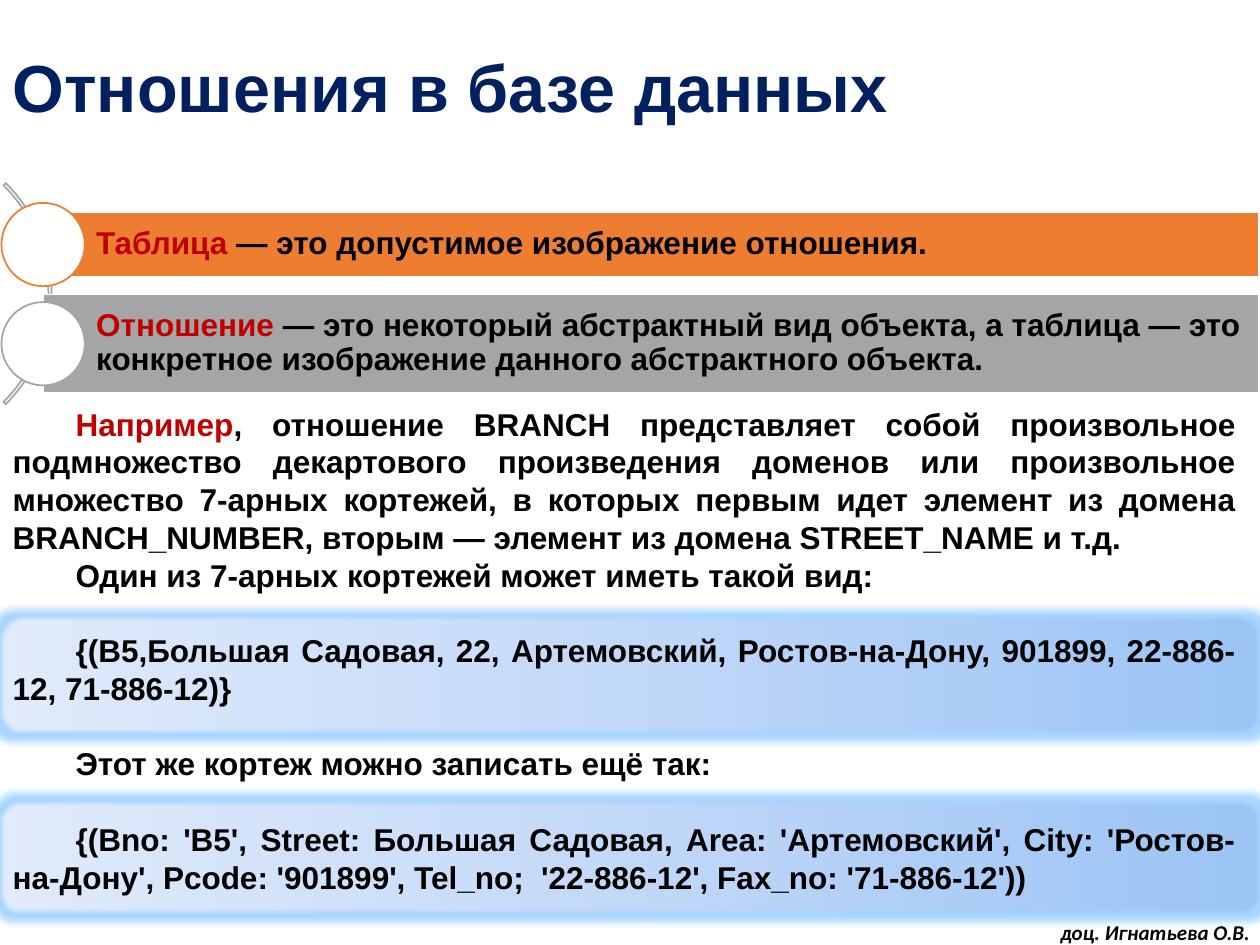
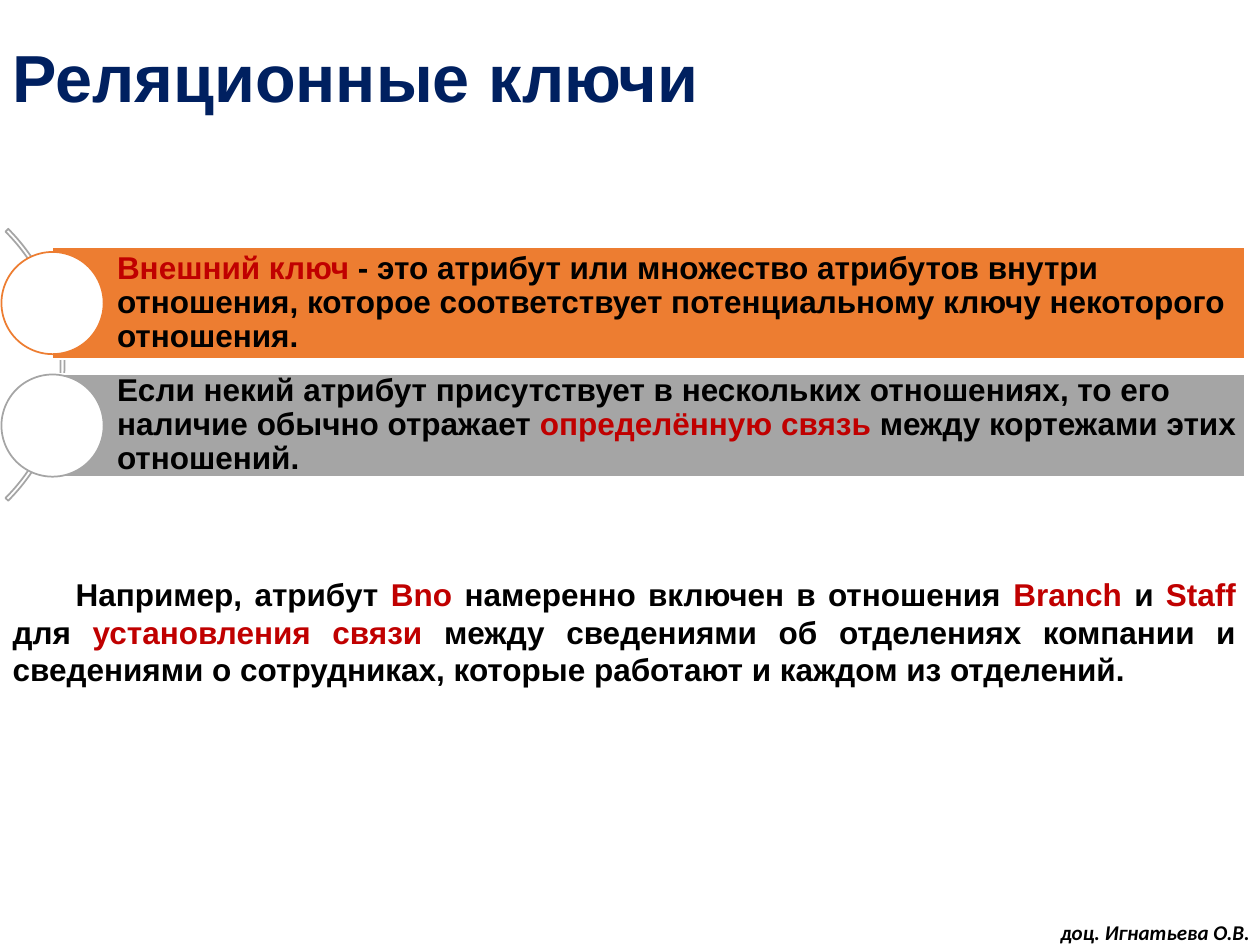
"""Build two lecture slides on database relations and relational keys."""
from copy import deepcopy

from lxml import etree
from pptx import Presentation
from pptx import util as u
from pptx.dml.color import RGBColor
from pptx.enum import shapes, text
from pptx.oxml import ns, parse_xml

NAVY = RGBColor(0x00, 0x20, 0x60)
RED = RGBColor(0xC0, 0x00, 0x00)
BLACK = RGBColor(0x00, 0x00, 0x00)
WHITE = RGBColor(0xFF, 0xFF, 0xFF)
ORANGE = RGBColor(0xED, 0x7D, 0x31)
GRAY = RGBColor(0xA5, 0xA5, 0xA5)
CAPSULE_BLUES = [RGBColor(0x9A, 0xC3, 0xF5), RGBColor(0xC2, 0xD8, 0xF8), RGBColor(0xE1, 0xEB, 0xFB)]
GLOW = f'<a:glow {ns.nsdecls("a")} rad="101600"><a:srgbClr val="A6D5FF"/></a:glow>'
SOFT_EDGE = f'<a:softEdge {ns.nsdecls("a")} rad="31750"/>'
CIRCLE_LEFT = 0.03
LINE_GAP = u.Pt(21.5)

SLIDES = [
    {
        "title": "Отношения в базе данных",
        "title_height": 3.12,
        "capsules": [(16.13, 2.29), (12.4, 2.39)],
        "arc": (-5.26, 2.77, 6.3, 0.01),
        "circle": 1.68,
        "band_right": 25.37,
        "inset": 1.07,
        "bands": [
            (4.27, 1.32, "*Таблица *— это допустимое изображение отношения."),
            (5.94, 1.98, "*Отношение* — это некоторый абстрактный вид объекта, а таблица — это "
                         "конкретное изображение данного абстрактного объекта."),
        ],
        "body": (8.03, 11.81),
        "paragraphs": [
            (0, "*Например*, отношение BRANCH представляет собой произвольное подмножество "
                "декартового произведения доменов или произвольное множество 7-арных кортежей, "
                "в которых первым идет элемент из домена BRANCH_NUMBER, вторым — элемент из "
                "домена STREET_NAME и т.д."),
            (0, "Один из 7-арных кортежей может иметь такой вид:"),
            (LINE_GAP, "{(B5,Большая Садовая, 22, Артемовский, Ростов-на-Дону, 901899, "
                       "22-886-12, 71-886-12)}"),
            (LINE_GAP, "Этот же кортеж можно записать ещё так:"),
            (LINE_GAP, "{(Вnо: 'В5', Street: Большая Садовая, Area: 'Артемовский', City: "
                       "'Ростов-на-Дону', Pcode: '901899', Tel_no;  '22-886-12', "
                       "Fax_no: '71-886-12'))"),
        ],
    },
    {
        "title": "Реляционные ключи",
        "title_height": 2.72,
        "capsules": [],
        "arc": (-6.45, 3.48, 7.75, 0.01),
        "circle": 2.06,
        "band_right": 25.1,
        "inset": 1.3,
        "bands": [
            (4.98, 2.26, "*Внешний ключ *- это атрибут или множество атрибутов внутри отношения, "
                         "которое соответствует потенциальному ключу некоторого отношения."),
            (7.54, 2.08, "Если некий атрибут присутствует в нескольких отношениях, то его наличие "
                         "обычно отражает *определённую связь *между кортежами этих отношений."),
        ],
        "body": (11.46, 2.69),
        "paragraphs": [
            (0, "Например, атрибут *Bnо* намеренно включен в отношения *Branch* и *Staff* для "
                "*установления связи *между сведениями об отделениях компании и сведениями о "
                "сотрудниках, которые работают и каждом из отделений."),
        ],
    },
]


def write(para, marked, size=18, color=BLACK, name="Arial"):
    """Fill a paragraph with bold runs; parts between asterisks turn red."""
    for number, part in enumerate(marked.split("*")):
        if part:
            span = para.add_run()
            span.text = part
            span.font.name = name
            span.font.size = u.Pt(size)
            span.font.bold = True
            span.font.color.rgb = RED if number % 2 else color


def add_figure(page, kind, left, top, width, height, fill=None, line=None):
    """Add a preset shape without shadow, with an optional fill and outline."""
    figure = page.shapes.add_shape(kind, u.Cm(left), u.Cm(top), u.Cm(width), u.Cm(height))
    figure.shadow.inherit = False
    if fill is None:
        figure.fill.background()
    else:
        figure.fill.solid()
        figure.fill.fore_color.rgb = fill
    if line is None:
        figure.line.fill.background()
    else:
        figure.line.color.rgb = line
        figure.line.width = u.Pt(1)
    return figure


deck = Presentation()
deck.slide_width, deck.slide_height = u.Cm(25.4), u.Cm(19.05)

for content in SLIDES:
    page = deck.slides.add_slide(deck.slide_layouts[1])
    title, body = page.placeholders

    for position, (top, height) in enumerate(content["capsules"]):
        capsule = add_figure(page, shapes.MSO_SHAPE.ROUNDED_RECTANGLE, 0, top, 25.4, height)
        capsule.fill.gradient()
        capsule.fill.gradient_angle = 180
        stop_list = capsule.element.spPr.find(".//" + ns.qn("a:gsLst"))
        stop_list.insert(1, deepcopy(stop_list[0]))
        for number, stop in enumerate(capsule.fill.gradient_stops):
            stop.position = number / 2
            stop.color.rgb = CAPSULE_BLUES[number]
        effects = capsule.element.spPr.find(ns.qn("a:effectLst"))
        effects.append(parse_xml(GLOW))
        effects.append(parse_xml(SOFT_EDGE))
        page.shapes.element.insert(2 + position, capsule.element)

    title.left, title.top = 0, u.Cm(0.28)
    title.width, title.height = u.Cm(25.4), u.Cm(content["title_height"])
    title.text_frame.vertical_anchor = text.MSO_ANCHOR.MIDDLE
    title.text_frame.auto_size = text.MSO_AUTO_SIZE.NONE
    heading = title.text_frame.paragraphs[0]
    heading.alignment = text.PP_ALIGN.LEFT
    heading.line_spacing = 0.9
    write(heading, content["title"], 38, NAVY)

    body_top, body_height = content["body"]
    body.left, body.top = 0, u.Cm(body_top)
    body.width, body.height = u.Cm(25.17), u.Cm(body_height)
    frame = body.text_frame
    frame.auto_size = text.MSO_AUTO_SIZE.NONE
    for number, (gap, marked) in enumerate(content["paragraphs"]):
        para = frame.add_paragraph() if number else frame.paragraphs[0]
        properties = para._p.get_or_add_pPr()
        properties.set("marL", "0")
        properties.set("indent", str(u.Cm(1.27)))
        etree.SubElement(properties, ns.qn("a:buNone"))
        para.alignment = text.PP_ALIGN.JUSTIFY
        para.space_before = u.Pt(0) if not gap else gap
        write(para, marked)

    footer = page.shapes.add_textbox(u.Cm(21.13), u.Cm(18.42), u.Cm(4.39), u.Cm(0.76))
    footer.text_frame.word_wrap = True
    author = footer.text_frame.paragraphs[0]
    write(author, "доц. Игнатьева О.В.", 12, name="Calibri")
    author.runs[0].font.italic = True

    arc_left, arc_top, arc_size, thickness = content["arc"]
    arc = add_figure(page, shapes.MSO_SHAPE.BLOCK_ARC, arc_left, arc_top, arc_size, arc_size, line=GRAY)
    for number, value in enumerate((189, 27, thickness)):
        arc.adjustments[number] = value

    circle_size = content["circle"]
    band_left = CIRCLE_LEFT + circle_size / 2
    for (top, height, marked), accent in zip(content["bands"], (ORANGE, GRAY)):
        band = add_figure(page, shapes.MSO_SHAPE.RECTANGLE, band_left, top,
                          content["band_right"] - band_left, height, accent, WHITE)
        frame = band.text_frame
        frame.word_wrap = True
        frame.vertical_anchor = text.MSO_ANCHOR.MIDDLE
        frame.margin_left = u.Cm(content["inset"])
        frame.margin_right = frame.margin_top = frame.margin_bottom = u.Cm(0.13)
        para = frame.paragraphs[0]
        para.alignment = text.PP_ALIGN.LEFT
        para.line_spacing = 0.9
        write(para, marked)
        add_figure(page, shapes.MSO_SHAPE.OVAL, CIRCLE_LEFT, top + (height - circle_size) / 2,
                   circle_size, circle_size, WHITE, accent)

deck.save("out.pptx")
